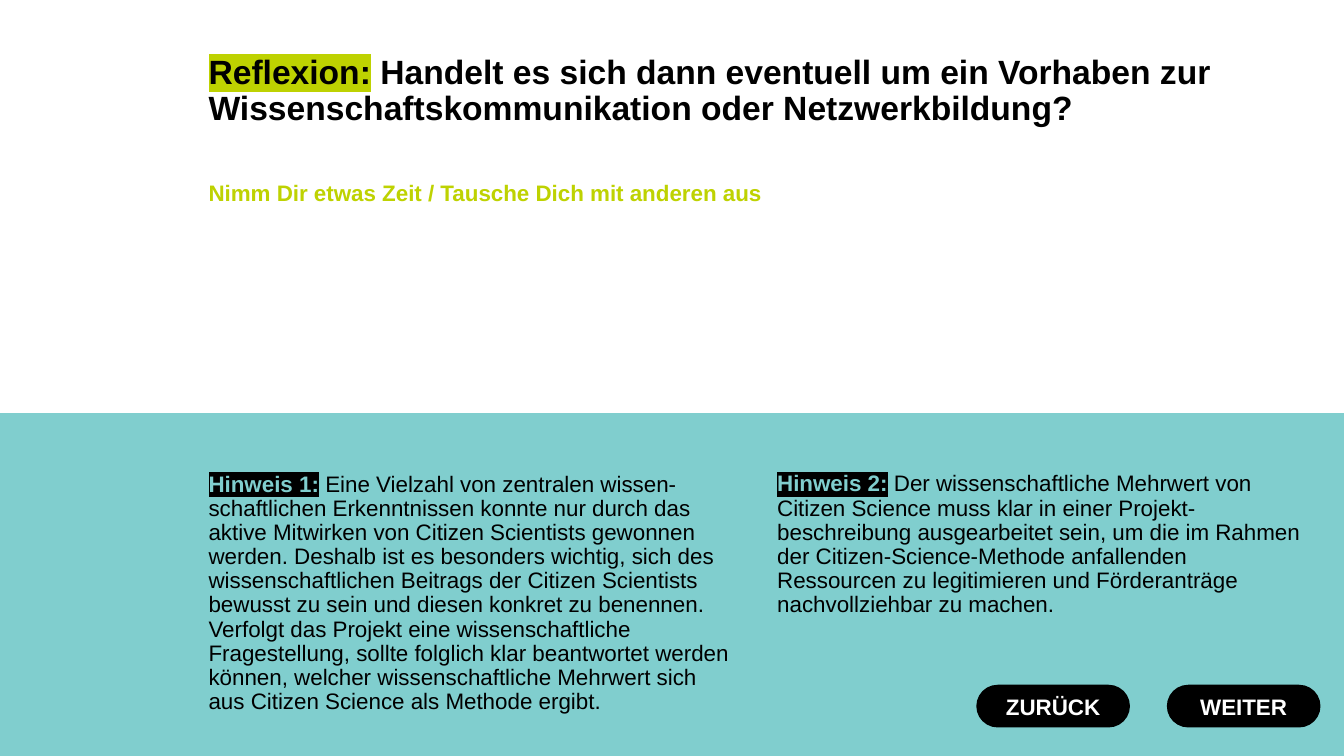
from dataclasses import dataclass
from typing import Optional

from lxml.etree import SubElement
from pptx import Presentation
from pptx.dml.color import RGBColor
from pptx.enum.shapes import MSO_SHAPE
from pptx.enum.text import MSO_ANCHOR, PP_ALIGN
from pptx.oxml.ns import qn
from pptx.shapes.autoshape import Shape
from pptx.slide import Slide
from pptx.text.text import _Paragraph
from pptx.util import Inches, Pt

BLACK = RGBColor(0x00, 0x00, 0x00)
WHITE = RGBColor(0xFF, 0xFF, 0xFF)
LIME = RGBColor(0xBE, 0xD2, 0x01)
TEAL = RGBColor(0x80, 0xCE, 0xCE)
FONT = "Arial"
LEFT = 1.97


@dataclass
class Hint:
    label: str
    text: str
    left: float
    width: float
    height: float


@dataclass
class Button:
    label: str
    left: float


HINTS = [
    Hint(
        "Hinweis 1:",
        "Eine Vielzahl von zentralen wissen-schaftlichen Erkenntnissen konnte nur "
        "durch das aktive Mitwirken von Citizen Scientists gewonnen werden. Deshalb "
        "ist es besonders wichtig, sich des wissenschaftlichen Beitrags der Citizen "
        "Scientists bewusst zu sein und diesen konkret zu benennen. Verfolgt das "
        "Projekt eine wissenschaftliche Fragestellung, sollte folglich klar "
        "beantwortet werden können, welcher wissenschaftliche Mehrwert sich aus "
        "Citizen Science als Methode ergibt.",
        LEFT, 5.45, 2.71,
    ),
    Hint(
        "Hinweis 2:",
        "Der wissenschaftliche Mehrwert von Citizen Science muss klar in einer "
        "Projekt-beschreibung ausgearbeitet sein, um die im Rahmen der "
        "Citizen-Science-Methode anfallenden Ressourcen zu legitimieren und "
        "Förderanträge nachvollziehbar zu machen.",
        7.61, 5.48, 2.16,
    ),
]
BUTTONS = [Button("WEITER", 11.58), Button("ZURÜCK", 9.69)]


def add_text(para: _Paragraph, text: str, *, size: int = 16, bold: bool = False,
             color: RGBColor = BLACK, mark: Optional[RGBColor] = None) -> None:
    """Append a formatted run, with a highlight if one is given."""
    run = para.add_run()
    run.text = text
    font = run.font
    font.name, font.size, font.bold = FONT, Pt(size), bold
    font.color.rgb = color
    if mark is not None:
        props = run._r.get_or_add_rPr()
        light = SubElement(props, qn("a:highlight"))
        SubElement(light, qn("a:srgbClr"), val=str(mark))
        props.find(qn("a:solidFill")).addnext(light)


def add_box(slide: Slide, left: float, top: float, width: float,
            height: float) -> Shape:
    """Add an empty text box that wraps its text."""
    box = slide.shapes.add_textbox(
        Inches(left), Inches(top), Inches(width), Inches(height))
    box.text_frame.word_wrap = True
    box.text_frame.paragraphs[0].line_spacing = 0.9
    return box


def add_block(slide: Slide, kind: MSO_SHAPE, left: float, top: float,
              width: float, height: float, color: RGBColor) -> Shape:
    """Add a plain filled shape."""
    block = slide.shapes.add_shape(
        kind, Inches(left), Inches(top), Inches(width), Inches(height))
    block.shadow.inherit = False
    block.fill.solid()
    block.fill.fore_color.rgb = color
    block.line.fill.background()
    return block


def add_title(slide: Slide) -> None:
    """Add the question and the call to reflect."""
    frame = add_box(slide, LEFT, 0.5, 10.45, 3.6).text_frame
    head = frame.paragraphs[0]
    add_text(head, "Reflexion:", size=24, bold=True, mark=LIME)
    add_text(head, " Handelt es sich dann eventuell um ein Vorhaben zur "
             "Wissenschaftskommunikation oder Netzwerkbildung?", size=24, bold=True)
    call = frame.add_paragraph()
    call.line_spacing = 0.9
    call.space_before = Pt(39)
    add_text(call, "Nimm Dir etwas Zeit / Tausche Dich mit anderen aus",
             bold=True, color=LIME)


def add_hint(slide: Slide, hint: Hint) -> None:
    """Add a hint with its marked label."""
    para = add_box(slide, hint.left, 4.64, hint.width,
                   hint.height).text_frame.paragraphs[0]
    add_text(para, hint.label, bold=True, color=TEAL, mark=BLACK)
    add_text(para, " ", bold=True, mark=TEAL)
    add_text(para, hint.text)


def add_button(slide: Slide, button: Button) -> None:
    """Add a pill-shaped button."""
    pill = add_block(slide, MSO_SHAPE.ROUNDED_RECTANGLE, button.left, 6.8,
                     1.51, 0.41, BLACK)
    pill.adjustments[0] = 0.5
    pill.line.color.rgb = BLACK
    pill.line.width = Pt(1)
    frame = pill.text_frame
    frame.vertical_anchor = MSO_ANCHOR.MIDDLE
    para = frame.paragraphs[0]
    para.alignment = PP_ALIGN.CENTER
    add_text(para, button.label, bold=True, color=WHITE)


def main() -> None:
    """Build and save the slide."""
    deck = Presentation()
    deck.slide_width, deck.slide_height = Inches(13.33), Inches(7.5)
    slide = deck.slides.add_slide(deck.slide_layouts[6])
    add_block(slide, MSO_SHAPE.RECTANGLE, 0, 4.1, 13.33, 3.4, TEAL)
    for button in BUTTONS:
        add_button(slide, button)
    add_title(slide)
    for hint in HINTS:
        add_hint(slide, hint)
    deck.save("out.pptx")


if __name__ == "__main__":
    main()
